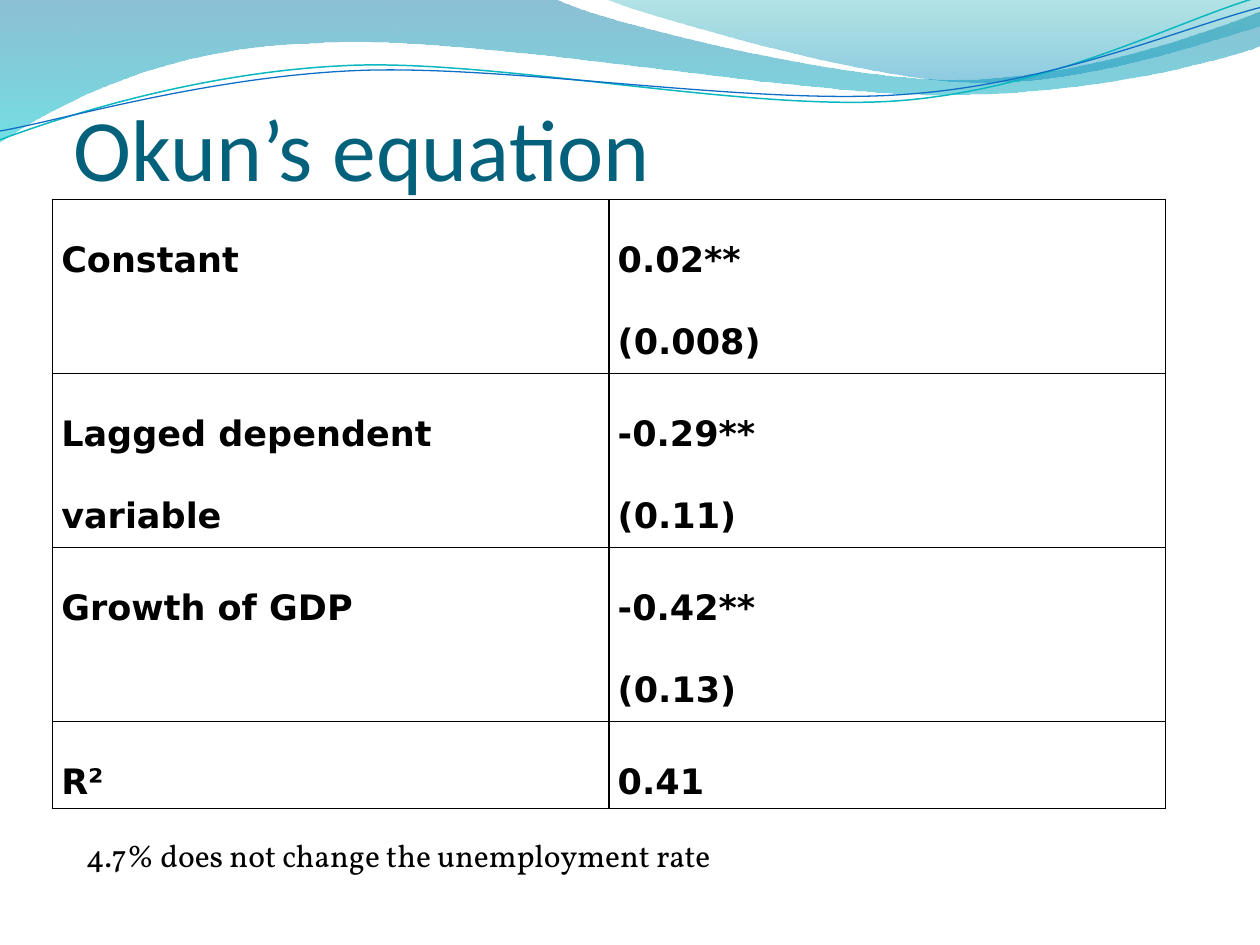
import math

import pptx
import pptx.dml.color
import pptx.enum.text
import pptx.oxml.ns
import pptx.util
from lxml import etree

Inches = pptx.util.Inches
Pt = pptx.util.Pt
qn = pptx.oxml.ns.qn


def color(hex_string):
    return pptx.dml.color.RGBColor.from_string(hex_string)


def grid(units):
    """The layout sits on a grid of twelfths of an inch."""
    return Inches(units / 12)


def turned(x, y, box, degrees):
    """The point turned clockwise about the middle of the box."""
    left, top, width, height = box
    middle_x, middle_y = left + width / 2, top + height / 2
    cos, sin = math.cos(math.radians(degrees)), math.sin(math.radians(degrees))
    dx, dy = x - middle_x, y - middle_y
    return middle_x + dx * cos - dy * sin, middle_y + dx * sin + dy * cos


class SlideBuilder:
    title_font, table_font, note_font = "Calibri", "DejaVu Sans", "Vollkorn"
    title_color, text_color = "04617B", "000000"

    def __init__(self, slide):
        self.slide = slide

    def add_run(self, paragraph, text, font, size, hex_string, bold=False):
        run = paragraph.add_run()
        run.text = text
        run.font.name, run.font.size, run.font.bold = font, Pt(size), bold
        run.font.color.rgb = color(hex_string)

    def outline(self, box, segments, closed, rotation=0):
        """Segments of two numbers are straight, those of six are curves."""
        ends = [(Inches(segment[-2]), Inches(segment[-1])) for segment in segments]
        builder = self.slide.shapes.build_freeform(*ends[0])
        builder.add_line_segments(ends[1:], close=closed)
        shape = builder.convert_to_shape()
        shape.shadow.inherit = False
        shape.left, shape.top, shape.width, shape.height = map(Inches, box)
        shape.rotation = rotation

        # Redraw the straight steps inside the box, with true curves
        outline = next(shape.element.iter(qn("a:path")))
        outline.set("w", str(shape.width))
        outline.set("h", str(shape.height))
        for step, segment in zip(list(outline), segments):
            if len(segment) == 6:
                bend = etree.Element(qn("a:cubicBezTo"))
                outline.replace(step, bend)
                step = bend
            for point in list(step):
                step.remove(point)
            for x, y in zip(segment[::2], segment[1::2]):
                x, y = turned(x, y, box, -rotation)
                etree.SubElement(step, qn("a:pt"), x=str(Inches(x - box[0])),
                                 y=str(Inches(y - box[1])))
        return shape

    def wave(self, box, segments, stops):
        shape = self.outline(box, segments, closed=True)
        shape.line.fill.background()
        shape.fill.gradient()
        shape.fill.gradient_angle = 270
        for position, (stop, (hex_string, _)) in enumerate(zip(shape.fill.gradient_stops, stops)):
            stop.position = position
            stop.color.rgb = color(hex_string)
        gradient = shape.element.spPr.find(qn("a:gradFill"))
        for node, (_, opacity) in zip(gradient.iter(qn("a:srgbClr")), stops):
            etree.SubElement(node, qn("a:alpha"), val=str(opacity * 1000))

    def curve(self, box, segments, hex_string, width):
        shape = self.outline(box, segments, closed=False, rotation=-2.7)
        shape.fill.background()
        shape.line.color.rgb = color(hex_string)
        shape.line.width = Pt(width)

    def title(self, text, left, top, width, height):
        title = self.slide.shapes.title
        title.left, title.top, title.width, title.height = map(grid, (left, top, width, height))
        self.slide.shapes.element.append(title.element)  # in front of the waves
        frame = title.text_frame
        frame.auto_size = pptx.enum.text.MSO_AUTO_SIZE.NONE
        frame.vertical_anchor = pptx.enum.text.MSO_ANCHOR.BOTTOM
        frame.margin_left = frame.margin_right = frame.margin_bottom = 0
        frame.margin_top = Inches(0.05)
        frame.paragraphs[0].alignment = pptx.enum.text.PP_ALIGN.LEFT
        self.add_run(frame.paragraphs[0], text, self.title_font, 50, self.title_color)

    def cell(self, cell, lines):
        cell.margin_left = cell.margin_right = Inches(0.07)
        cell.margin_top = cell.margin_bottom = 0
        frame = cell.text_frame
        for index, line in enumerate(lines):
            paragraph = frame.add_paragraph() if index else frame.paragraphs[0]
            paragraph.line_spacing = 2.0
            self.add_run(paragraph, line, self.table_font, 20, self.text_color, bold=True)
        properties = cell._tc.get_or_add_tcPr()
        for side in ("a:lnL", "a:lnR", "a:lnT", "a:lnB"):
            border = etree.SubElement(properties, qn(side), w=str(Pt(1)))
            fill = etree.SubElement(border, qn("a:solidFill"))
            etree.SubElement(fill, qn("a:srgbClr"), val=self.text_color)
        cell.fill.background()

    def table(self, rows, left, top, width, height):
        line_height = height / sum(len(values) for _, values in rows)
        table = self.slide.shapes.add_table(
            len(rows), 2, *map(grid, (left, top, width, height))).table
        table.first_row = table.horz_banding = False
        for row, (label, values) in zip(table.rows, rows):
            row.height = grid(line_height * len(values))
            self.cell(row.cells[0], [label])
            self.cell(row.cells[1], values)

    def note(self, text, left, top, width, height):
        box = self.slide.shapes.add_textbox(*map(grid, (left, top, width, height)))
        box.text_frame.word_wrap = True
        self.add_run(box.text_frame.paragraphs[0], text, self.note_font, 18, self.text_color)


def main():
    deck = pptx.Presentation()
    deck.slide_width, deck.slide_height = Inches(10), Inches(7.5)
    page = SlideBuilder(deck.slides.add_slide(deck.slide_layouts[5]))

    # Waves along the top edge
    page.wave((-0.01, -0.01, 10.02, 1.14),
              [(0, 0), (4.4, -0.01), (4.76, 0.17, 6.64, 0.63, 7.58, 0.63),
               (8.53, 0.63, 9.58, 0.26, 10, 0.09), (10.01, 0.36),
               (9.83, 0.44, 8.7, 0.76, 7.46, 0.75), (6.22, 0.75, 3.82, 0.28, 2.57, 0.34),
               (1.29, 0.36, 0.46, 0.83, -0.01, 1.13), (0, 0)],
              [("0074A1", 45), ("00C6CF", 55)])
    page.wave((4.79, -0.01, 5.21, 0.7),
              [(4.79, -0.01), (5.09, 0.11, 6.82, 0.62, 7.69, 0.65),
               (8.56, 0.69, 9.61, 0.32, 10, 0.21), (10, 0), (4.79, -0.01)],
              [("00A1A9", 30), ("008BBF", 45)])
    page.curve((-0.02, 0.22, 10.02, 0.71),
               [(0, 1.11), (0.48, 0.93, 1.58, 0.57, 2.77, 0.52),
                (3.95, 0.47, 5.93, 0.89, 7.13, 0.8), (8.33, 0.71, 9.38, 0.15, 9.98, -0.02)],
               "0AB8BF", 0.85)
    page.curve((-0.02, 0.3, 10.03, 0.58),
               [(0, 1.04), (0.47, 0.96, 1.64, 0.61, 2.83, 0.56),
                (4.03, 0.51, 5.97, 0.84, 7.17, 0.75), (8.36, 0.67, 9.41, 0.21, 10, 0.06)],
               "0F6FC6", 0.75)

    # Title, regression estimates and remark
    page.title("Okun’s equation", 7, 4, 108, 15)
    page.table([("Constant", ["0.02**", "(0.008)"]),
                ("Lagged dependent variable", ["-0.29**", "(0.11)"]),
                ("Growth of GDP", ["-0.42**", "(0.13)"]),
                ("R²", ["0.41"])], 5, 19, 106, 58)
    page.note("4.7% does not change the unemployment rate", 7, 79, 89.75, 8.5)

    deck.save("out.pptx")


if __name__ == "__main__":
    main()
